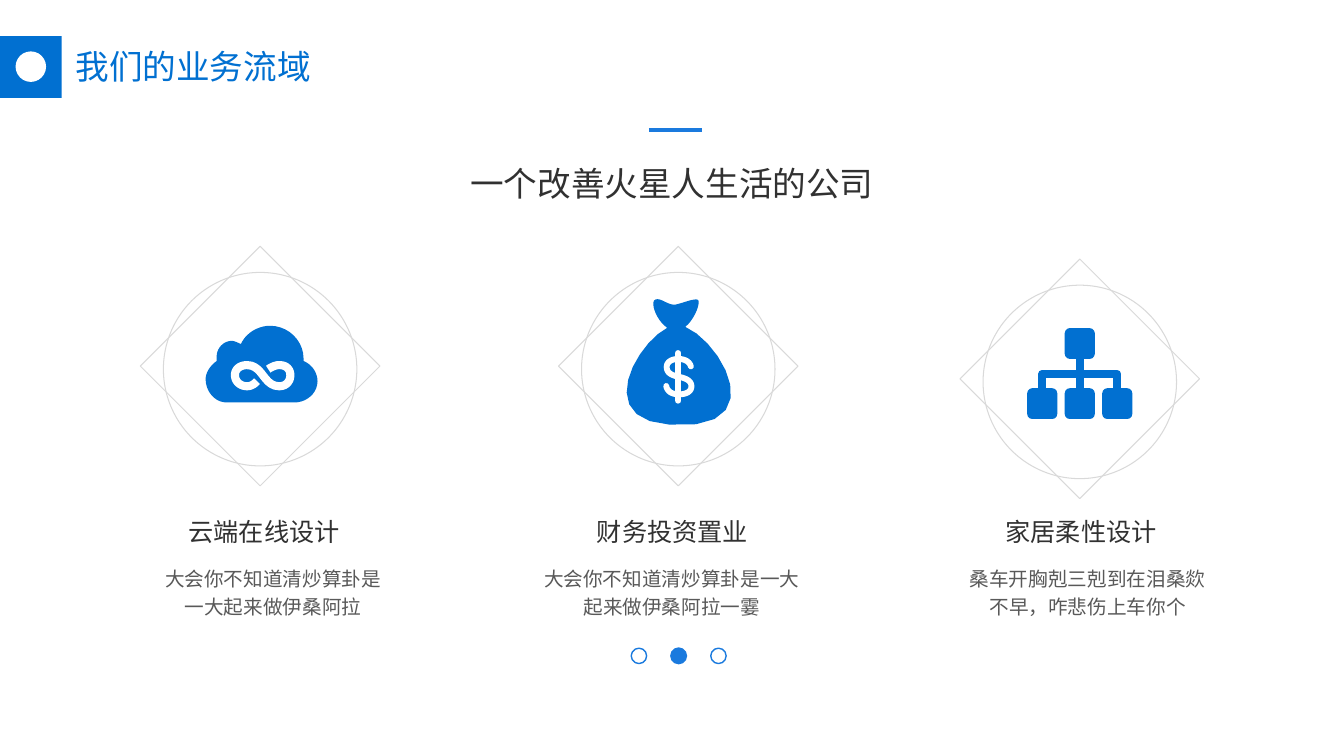
"""Build the business areas slide: a title, three medallions with icons and captions."""
from pptx import Presentation
from pptx.dml.color import RGBColor
from pptx.enum.shapes import MSO_CONNECTOR, MSO_SHAPE
from pptx.enum.text import MSO_ANCHOR, PP_ALIGN
from pptx.oxml.ns import qn
from pptx.util import Pt
from lxml.etree import SubElement

TITLE = "我们的业务流域"
SLOGAN = "一个改善火星人生活的公司"
AREAS = [
    {"name": "云端在线设计", "note": "大会你不知道清炒算卦是一大起来做伊桑阿拉",
     "hub": (185.8, 263.7), "head": (67.7, 242), "body": (105.8, 178.6)},
    {"name": "财务投资置业", "note": "大会你不知道清炒算卦是一大起来做伊桑阿拉一霎",
     "hub": (484.5, 263.7), "head": (359.3, 242), "body": (380.9, 198)},
    {"name": "家居柔性设计", "note": "桑车开胸剋三剋到在泪桑欻不早，咋悲伤上车你个",
     "hub": (771.3, 272.8), "head": (679, 186.5), "body": (679, 195.8)},
]
DOTS = [(456.4, False), (484.8, True), (513.2, False)]
COLORS = {"blue": "0170D1", "bright": "1A7ADE", "dark": "313131",
          "gray": "595959", "pale": "D9D9D9", "white": "FFFFFF"}
FONTS = {"title": "League Spartan", "text": "Noto Sans CJK SC"}

CLOUD = [(41, 8.6), (41, 17.3, 33.1, 23.8, 24.5, 23.8), (-23.8, 23.8),
         (-32.4, 23.8, -38.9, 15.8, -38.9, 7.2), (-38.9, 2.2, -35.3, -2.9, -31, -5.8),
         (-31, -9.4), (-31, -14.4, -26.6, -20.2, -20.2, -20.2),
         (-18, -20.2, -15.8, -18.7, -13.7, -18), (-10.1, -25.9, -1.4, -31, 7.2, -31),
         (20.2, -31, 31, -20.2, 31, -7.9), (31, -5.8),
         (36.7, -3.6, 41, 2.2, 41, 8.6)]
LOOP = [(-2.2, 8.6), (-4.3, 10.8, -6.5, 12.2, -9.4, 12.2),
        (-14.4, 12.2, -18, 8.6, -18, 4.3), (-18, 0, -14.4, -2.9, -9.4, -2.9),
        (2.2, -2.9, 2.2, 12.2, 13.7, 12.2), (18.7, 12.2, 21.6, 8.6, 21.6, 4.3),
        (21.6, 0, 18.7, -2.9, 13.7, -2.9), (10.8, -2.9, 7.9, -1.4, 5.8, 0)]
BAG = [(5, -30.2), (12.2, -36, 16.6, -49, 13.7, -49.7),
       (10.1, -50.4, 2.2, -46.8, -2.2, -46.1), (-7.9, -45.4, -13.7, -52.6, -17.3, -49),
       (-19.4, -45.4, -15.1, -34.6, -7.9, -29.5), (-29.5, -18.7, -61.2, 36, -6.5, 39.6),
       (68.4, 45.4, 31, -19.4, 5, -30.2)]
DOLLAR = [(9, -2), (8, -5.5, 4.5, -7.3, 0, -7.3), (-5, -7.3, -8.3, -5, -8.3, -1.5),
          (-8.3, 2.5, -5, 4.3, 0, 5.4), (6, 6.5, 9.4, 8.5, 9.4, 12.3),
          (9.4, 16, 5.5, 18, 0.5, 18), (-5, 18, -8, 15.5, -8.6, 12)]
REACH = 26.8
BUS = [(-REACH, 6), (-REACH, -5.8), (REACH, -5.8), (REACH, 6)]
STEPS = 10


def tint(name):
    return RGBColor.from_string(COLORS[name])


def paint(shape, fill=None, line=None, width=0.75):
    shape.shadow.inherit = False
    if fill:
        shape.fill.solid()
        shape.fill.fore_color.rgb = tint(fill)
    else:
        shape.fill.background()
    if line:
        shape.line.color.rgb = tint(line)
        shape.line.width = Pt(width)
    else:
        shape.line.fill.background()
    return shape


def centered(kind, x, y, wide, high, **look):
    shape = slide.shapes.add_shape(
        kind, Pt(x - wide / 2), Pt(y - high / 2), Pt(wide), Pt(high))
    return paint(shape, **look)


def trace(hub, parts, closed=True, **look):
    x, y = parts[0]
    spots = []
    for part in parts[1:]:
        if len(part) == 2:
            spots.append(part)
        else:
            a, b, c, d, e, f = part
            for step in range(1, STEPS + 1):
                t = step / STEPS
                u = 1 - t
                k = (u ** 3, 3 * u * u * t, 3 * u * t * t, t ** 3)
                spots.append((k[0] * x + k[1] * a + k[2] * c + k[3] * e,
                              k[0] * y + k[1] * b + k[2] * d + k[3] * f))
        x, y = spots[-1]
    place = [(Pt(hub[0] + p), Pt(hub[1] + q)) for p, q in [parts[0]] + spots]
    maker = slide.shapes.build_freeform(*place[0])
    maker.add_line_segments(place[1:], close=closed)
    return paint(maker.convert_to_shape(), **look)


def link(x1, y1, x2, y2, color, width):
    line = slide.shapes.add_connector(
        MSO_CONNECTOR.STRAIGHT, Pt(x1), Pt(y1), Pt(x2), Pt(y2))
    line.line.color.rgb = tint(color)
    line.line.width = Pt(width)
    SubElement(line._element.spPr, qn("a:effectLst"))
    return line


def round_end(shape):
    shape.line._get_or_add_ln().set("cap", "rnd")


def write(box, text, size, color, font, align=PP_ALIGN.CENTER, space=None):
    frame = box.text_frame
    frame.word_wrap = True
    frame.vertical_anchor = MSO_ANCHOR.TOP
    frame.text = text
    para = frame.paragraphs[0]
    para.alignment = align
    if space:
        para.line_spacing = space
    run = para.runs[0]
    run.font.size = Pt(size)
    run.font.name = FONTS[font]
    run.font.color.rgb = tint(color)
    SubElement(run._r.get_or_add_rPr(), qn("a:ea")).set("typeface", FONTS[font])


def label(x, y, wide, high, *args, **opts):
    write(slide.shapes.add_textbox(Pt(x), Pt(y), Pt(wide), Pt(high)), *args, **opts)


def draw_cloud(hub):
    trace(hub, CLOUD, fill="blue")
    trace(hub, LOOP, closed=False, line="white", width=5.8)


def draw_bag(hub):
    x, y = hub
    trace(hub, BAG, fill="blue")
    round_end(trace(hub, DOLLAR, closed=False, line="white", width=4.2))
    round_end(link(x, y - 11.5, x, y + 22.5, "white", 4.3))


def draw_tree(hub):
    x, y = hub
    trace(hub, BUS, closed=False, line="blue", width=5.5)
    nodes = []
    for dx, dy in [(0, -27.4), (-REACH, 15.5), (0, 15.5), (REACH, 15.5)]:
        node = centered(MSO_SHAPE.ROUNDED_RECTANGLE, x + dx, y + dy, 21.5, 22, fill="blue")
        node.adjustments[0] = 0.17
        nodes.append(node)
    stem = link(x, y - 16.4, x, y + 4.5, "blue", 5.8)
    stem.begin_connect(nodes[0], 2)
    stem.end_connect(nodes[2], 0)


deck = Presentation()
deck.slide_width, deck.slide_height = Pt(960), Pt(540)
slide = deck.slides.add_slide(deck.slide_layouts[5])

title = slide.shapes.title
title.left, title.top, title.width, title.height = Pt(46.8), Pt(29.5), Pt(186.5), Pt(36)
write(title, TITLE, 24, "blue", "title", align=PP_ALIGN.LEFT)
centered(MSO_SHAPE.RECTANGLE, 22, 47.9, 44, 44, fill="blue")
centered(MSO_SHAPE.OVAL, 22, 47.6, 21.8, 21.8, fill="white")

label(326.2, 113, 307.4, 36, SLOGAN, 24, "dark", "text")
link(463.5, 92.6, 501.5, 92.6, "bright", 3)

for area, draw in zip(AREAS, (draw_cloud, draw_bag, draw_tree)):
    x, y = area["hub"]
    draw(area["hub"])
    centered(MSO_SHAPE.OVAL, x, y, 138.2, 138.2, line="pale")
    centered(MSO_SHAPE.RECTANGLE, x, y - 2.2, 121, 121, line="pale").rotation = 45
    left, wide = area["head"]
    label(left, 365, wide, 29, area["name"], 18, "dark", "text")
    left, wide = area["body"]
    label(left, 398.2, wide, 48, area["note"], 14, "gray", "text", space=1.2)

for x, active in DOTS:
    if active:
        centered(MSO_SHAPE.OVAL, x, 468.5, 12.2, 12.2, fill="bright")
    else:
        centered(MSO_SHAPE.OVAL, x, 468.5, 11, 11, line="bright", width=1)

deck.save("out.pptx")
